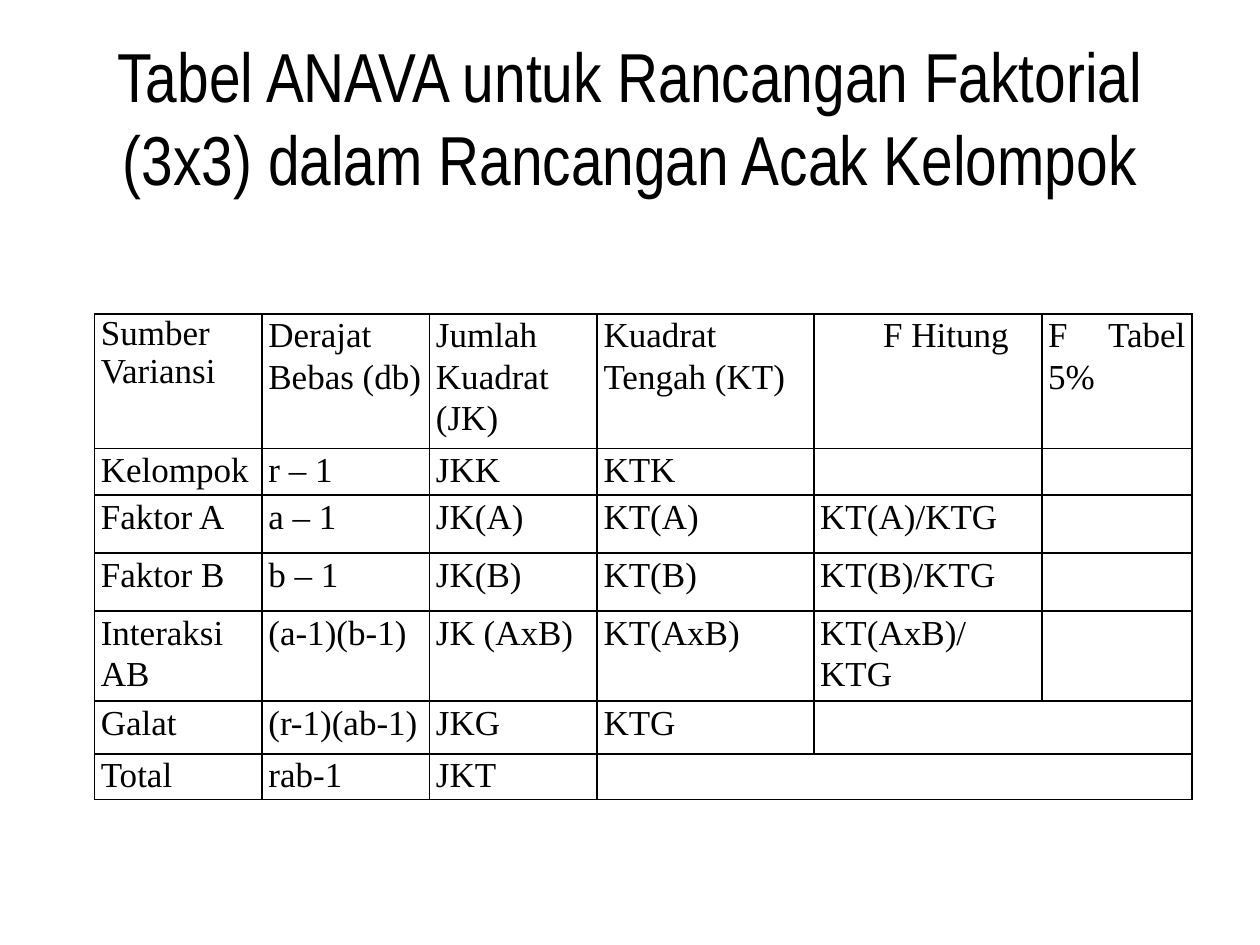
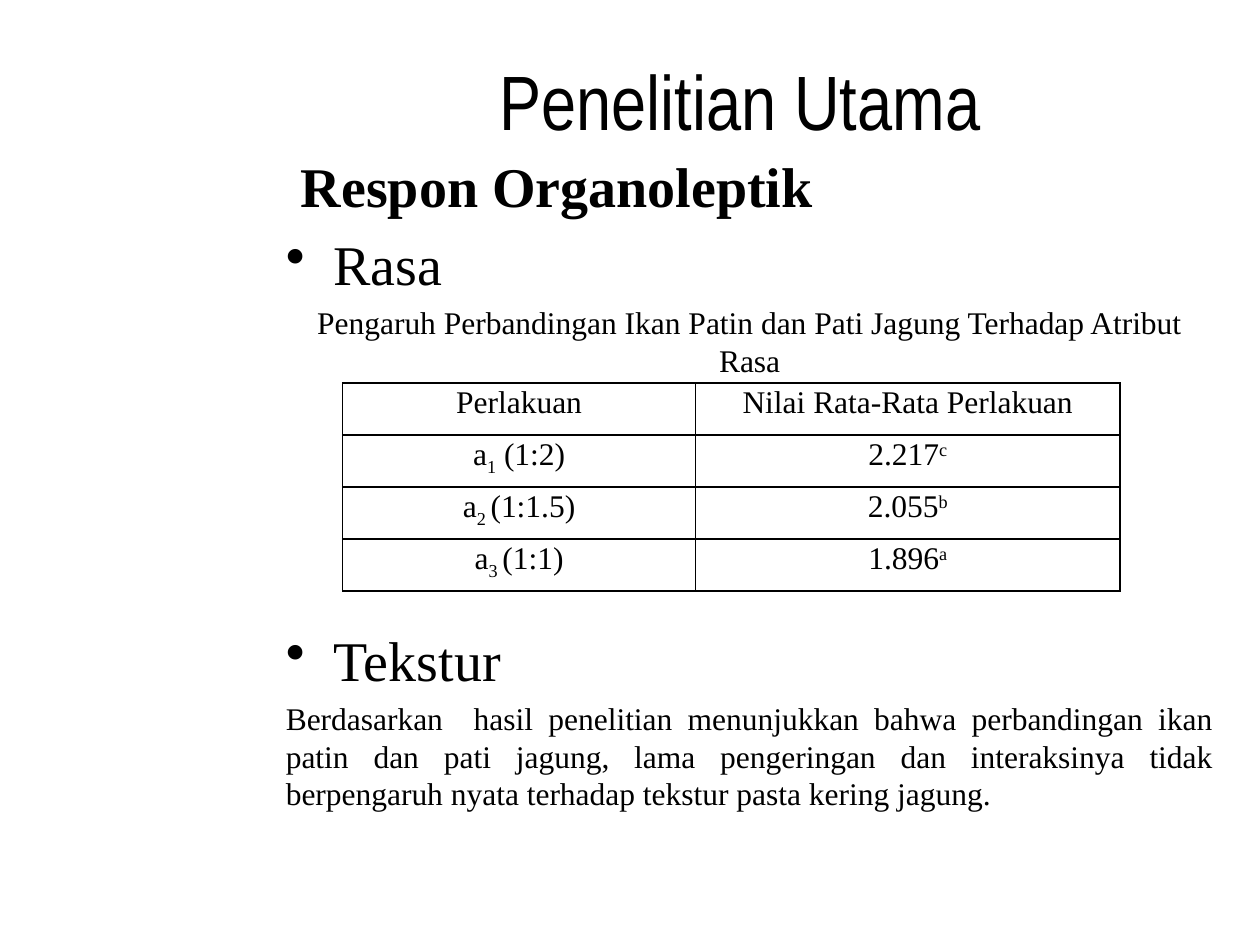
from dataclasses import dataclass

from lxml import etree
from pptx import Presentation
from pptx import util as u
from pptx.dml.color import RGBColor
from pptx.enum import text
from pptx.oxml import ns

ALIGN = text.PP_ALIGN


@dataclass(frozen=True)
class Theme:
    ink: RGBColor = RGBColor(0, 0, 0)
    title_font: str = "Arial Narrow"
    body_font: str = "Times New Roman"
    heading: int = 32
    anova: int = 20
    detail: int = 18
    border: float = 1
    table_leading: float = 1.07


THEME = Theme()

ANOVA = {
    "title": "Tabel ANAVA untuk Rancangan Faktorial (3x3) dalam Rancangan Acak Kelompok",
    "title_box": (0.5, 0.3, 9, 1.25),
    "title_size": 39.6,
    "origin": (0.75, 2.49),
    "columns": (1.33, 1.33, 1.33, 1.72, 1.81, 1.19),
    "heights": (1.07, 0.37, 0.46, 0.46, 0.71, 0.42, 0.36),
    "rows": [
        ("Sumber Variansi", "Derajat Bebas (db)", "Jumlah Kuadrat (JK)",
         "Kuadrat Tengah (KT)", "F Hitung", "F Tabel 5%"),
        ("Kelompok", "r – 1", "JKK", "KTK"),
        ("Faktor A", "a – 1", "JK(A)", "KT(A)", "KT(A)/KTG"),
        ("Faktor B", "b – 1", "JK(B)", "KT(B)", "KT(B)/KTG"),
        ("Interaksi AB", "(a-1)(b-1)", "JK (AxB)", "KT(AxB)", "KT(AxB)/KTG"),
        ("Galat", "(r-1)(ab-1)", "JKG", "KTG"),
        ("Total", "rab-1", "JKT"),
    ],
    "merged_tails": (5, 6),
}

# Table text is a string, or a list of (text, baseline shift in percent).
TASTE = {
    "title": "Penelitian Utama",
    "title_box": (2.24, 0.21, 7.27, 1.17),
    "title_size": 44,
    "origin": (2.72, 3.04),
    "columns": (2.8, 3.37),
    "heights": (1.65 / 4,) * 4,
    "rows": [
        ("Perlakuan", "Nilai Rata-Rata Perlakuan"),
        ([("a", 0), ("1", -25), (" (1:2)", 0)], [("2.217", 0), ("c", 30)]),
        ([("a", 0), ("2 ", -25), ("(1:1.5)", 0)], [("2.055", 0), ("b", 30)]),
        ([("a", 0), ("3 ", -25), ("(1:1)", 0)], [("1.896", 0), ("a", 30)]),
    ],
}

RESPONSE_BOX = (2.17, 1.15, 7.56, 6.04)
TABLE_GAP = 141  # points kept free for the table above "Tekstur"
HEAD, SMALL = THEME.heading, THEME.detail
RESPONSES = [
    dict(words="Respon Organoleptik", size=HEAD, indent=0.12, bold=True),
    dict(words="Rasa", size=HEAD, before=6.4, bullet=True),
    dict(words="Pengaruh Perbandingan Ikan Patin dan Pati Jagung Terhadap Atribut Rasa",
         size=SMALL, before=3.6, align=ALIGN.CENTER),
    dict(words="Tekstur", size=HEAD, before=TABLE_GAP, bullet=True),
    dict(words="Berdasarkan  hasil penelitian menunjukkan bahwa perbandingan ikan patin "
               "dan pati jagung, lama pengeringan dan interaksinya tidak berpengaruh "
               "nyata terhadap tekstur pasta kering jagung.",
         size=SMALL, before=3.6, align=ALIGN.JUSTIFY),
]


def inches(values):
    return [u.Inches(value) for value in values]


def write(paragraph, words, size, font=THEME.body_font, align=ALIGN.LEFT,
          leading=None, before=None, indent=0, bullet=False, bold=False):
    props = paragraph._p.get_or_add_pPr()
    if bullet:
        indent = 0.38
        props.set("indent", str(-u.Inches(indent)))
        etree.SubElement(props, ns.qn("a:buChar")).set("char", "•")
    if indent:
        props.set("marL", str(u.Inches(indent)))
    paragraph.alignment = align
    if leading:
        paragraph.line_spacing = leading
    if before:
        paragraph.space_before = u.Pt(before)
    paragraph.font.name = font
    paragraph.font.size = u.Pt(size)
    paragraph.font.bold = bold
    paragraph.font.color.rgb = THEME.ink
    for part, shift in [(words, 0)] if isinstance(words, str) else words:
        run = paragraph.add_run()
        run.text = part
        if shift:
            run._r.get_or_add_rPr().set("baseline", str(shift * 1000))


def add_frame(slide, box):
    frame = slide.shapes.add_textbox(*inches(box)).text_frame
    frame.word_wrap = True
    return frame


def add_titled_slide(deck, content):
    slide = deck.slides.add_slide(deck.slide_layouts[6])
    frame = add_frame(slide, content["title_box"])
    frame.vertical_anchor = text.MSO_ANCHOR.MIDDLE
    write(frame.paragraphs[0], content["title"], content["title_size"],
          THEME.title_font, ALIGN.CENTER)
    return slide


def outline(cell):
    props = cell._tc.get_or_add_tcPr()
    for position, side in enumerate(("lnL", "lnR", "lnT", "lnB")):
        line = etree.Element(ns.qn(f"a:{side}"), w=str(u.Pt(THEME.border)))
        fill = etree.SubElement(line, ns.qn("a:solidFill"))
        etree.SubElement(fill, ns.qn("a:srgbClr")).set("val", str(THEME.ink))
        props.insert(position, line)


def add_grid(slide, content, size, align, side_margin):
    columns, heights = content["columns"], content["heights"]
    table = slide.shapes.add_table(
        len(heights), len(columns),
        *inches((*content["origin"], sum(columns), sum(heights)))).table
    table.first_row = table.horz_banding = False
    for column, width in zip(table.columns, inches(columns)):
        column.width = width
    for row, height in zip(table.rows, inches(heights)):
        row.height = height
    for cell in table.iter_cells():
        cell.margin_left = cell.margin_right = u.Inches(side_margin)
        cell.margin_top = cell.margin_bottom = 0
        cell.fill.background()
        outline(cell)
    for r, row in enumerate(content["rows"]):
        for c, words in enumerate(row):
            write(table.cell(r, c).text_frame.paragraphs[0], words, size,
                  align=align, leading=THEME.table_leading)
    for r in content.get("merged_tails", ()):
        table.cell(r, len(content["rows"][r])).merge(table.cell(r, len(columns) - 1))
    return table


def main():
    deck = Presentation()
    deck.slide_width, deck.slide_height = inches((10, 7.5))

    slide = add_titled_slide(deck, ANOVA)
    anova = add_grid(slide, ANOVA, THEME.anova, ALIGN.JUSTIFY, 0.05)
    source = anova.cell(0, 0).text_frame.paragraphs[0]
    source.alignment, source.line_spacing = ALIGN.LEFT, 1.0
    f_ratio = anova.cell(0, 4).text_frame.paragraphs[0]
    f_ratio._p.get_or_add_pPr().set("marL", str(u.Inches(0.5)))

    slide = add_titled_slide(deck, TASTE)
    frame = add_frame(slide, RESPONSE_BOX)
    for i, response in enumerate(RESPONSES):
        paragraph = frame.add_paragraph() if i else frame.paragraphs[0]
        write(paragraph, **response)
    add_grid(slide, TASTE, THEME.detail, ALIGN.CENTER, 0.07)

    deck.save("out.pptx")


if __name__ == "__main__":
    main()
